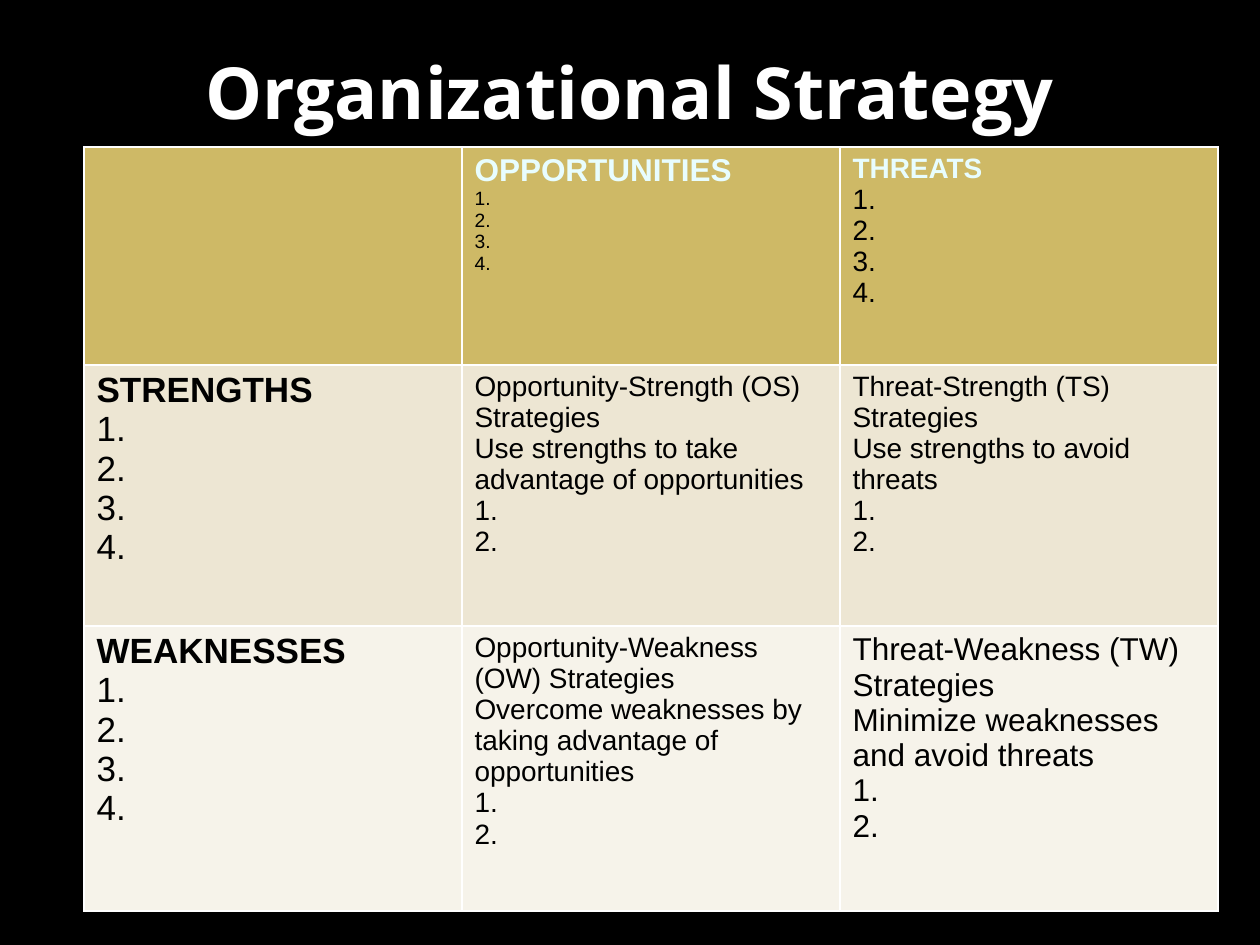
"""Builds a slide with a SWOT matrix of organizational strategies."""
from dataclasses import dataclass

from lxml import etree
from pptx import Presentation
from pptx import util as u
from pptx.dml.color import RGBColor
from pptx.enum import text
from pptx.oxml import ns

PX = 914400 / 126
COLORS = {
    "background": "000000",
    "title": "FFFFFF",
    "heading": "E8FDFE",
    "body": "000000",
    "border": "FFFFFF",
}
ROW_FILLS = ("CEB966", "EDE6D3", "F6F3EA")
ROW_HEIGHTS = (218, 261, 285)
COLUMN_WIDTH = 378
TWO = "1.\n2."
FOUR = "1.\n2.\n3.\n4."


@dataclass(frozen=True)
class Line:
    words: str
    size: int
    bold: bool = False
    color: str = "body"
    font: str = "Arial"


def factor(name: str, size: int, list_size: int, color: str = "body") -> list[Line]:
    """Returns a bold factor name with four numbered places."""
    return [Line(name, size, True, color), Line(FOUR, list_size)]


def strategy(name: str, advice: str, size: int) -> list[Line]:
    """Returns a strategy name, its advice and two numbered places."""
    return [Line(words, size) for words in (f"{name} Strategies", advice, TWO)]


MATRIX = (
    ([], factor("OPPORTUNITIES", 18, 11, "heading"), factor("THREATS", 16, 16, "heading")),
    (
        factor("STRENGTHS", 20, 20),
        strategy("Opportunity-Strength (OS)", "Use strengths to take advantage of opportunities", 16),
        strategy("Threat-Strength (TS)", "Use strengths to avoid threats", 16),
    ),
    (
        factor("WEAKNESSES", 20, 20),
        strategy(
            "Opportunity-Weakness (OW)",
            "Overcome weaknesses by taking advantage of opportunities",
            16,
        ),
        strategy("Threat-Weakness (TW)", "Minimize weaknesses and avoid threats", 18),
    ),
)


def px(length: int) -> u.Emu:
    """Turns pixels into EMU."""
    return u.Emu(round(length * PX))


def write(frame, lines: list[Line], align=text.PP_ALIGN.LEFT) -> None:
    """Writes each line as a paragraph, with breaks where it is split."""
    for index, line in enumerate(lines):
        para = frame.add_paragraph() if index else frame.paragraphs[0]
        para.alignment = align
        for part_index, part in enumerate(line.words.split("\n")):
            if part_index:
                para.add_line_break()
            span = para.add_run()
            span.text = part
            span.font.name = line.font
            span.font.size = u.Pt(line.size)
            span.font.bold = line.bold
            span.font.color.rgb = RGBColor.from_string(COLORS[line.color])


def style_cell(cell, fill: str) -> None:
    """Gives a cell thin borders on all sides and a solid fill."""
    properties = cell._tc.get_or_add_tcPr()
    for side in ("lnL", "lnR", "lnT", "lnB"):
        border = etree.SubElement(properties, ns.qn(f"a:{side}"), w=str(u.Pt(1)))
        solid = etree.SubElement(border, ns.qn("a:solidFill"))
        etree.SubElement(solid, ns.qn("a:srgbClr"), val=COLORS["border"])
    cell.fill.solid()
    cell.fill.fore_color.rgb = RGBColor.from_string(fill)


def add_title(page) -> None:
    """Adds the centred slide title."""
    box = page.shapes.add_textbox(px(63), px(38), px(1134), px(106))
    frame = box.text_frame
    frame.word_wrap = True
    frame.vertical_anchor = text.MSO_ANCHOR.MIDDLE
    title = Line("Organizational Strategy", 41, True, "title", "Open Sans")
    write(frame, [title], text.PP_ALIGN.CENTER)


def add_matrix(page) -> None:
    """Adds the strategy table."""
    columns = len(MATRIX[0])
    table = page.shapes.add_table(
        len(MATRIX), columns, px(84), px(147), px(columns * COLUMN_WIDTH), px(sum(ROW_HEIGHTS))
    ).table
    table.horz_banding = False
    for column in table.columns:
        column.width = px(COLUMN_WIDTH)
    for row, height, fill, contents in zip(table.rows, ROW_HEIGHTS, ROW_FILLS, MATRIX):
        row.height = px(height)
        for cell, lines in zip(row.cells, contents):
            style_cell(cell, fill)
            write(cell.text_frame, lines)


def main() -> None:
    """Builds and saves the deck."""
    deck = Presentation()
    deck.slide_width, deck.slide_height = px(1260), px(945)
    page = deck.slides.add_slide(deck.slide_layouts[6])
    page.background.fill.solid()
    page.background.fill.fore_color.rgb = RGBColor.from_string(COLORS["background"])
    add_title(page)
    add_matrix(page)
    deck.save("out.pptx")


if __name__ == "__main__":
    main()
